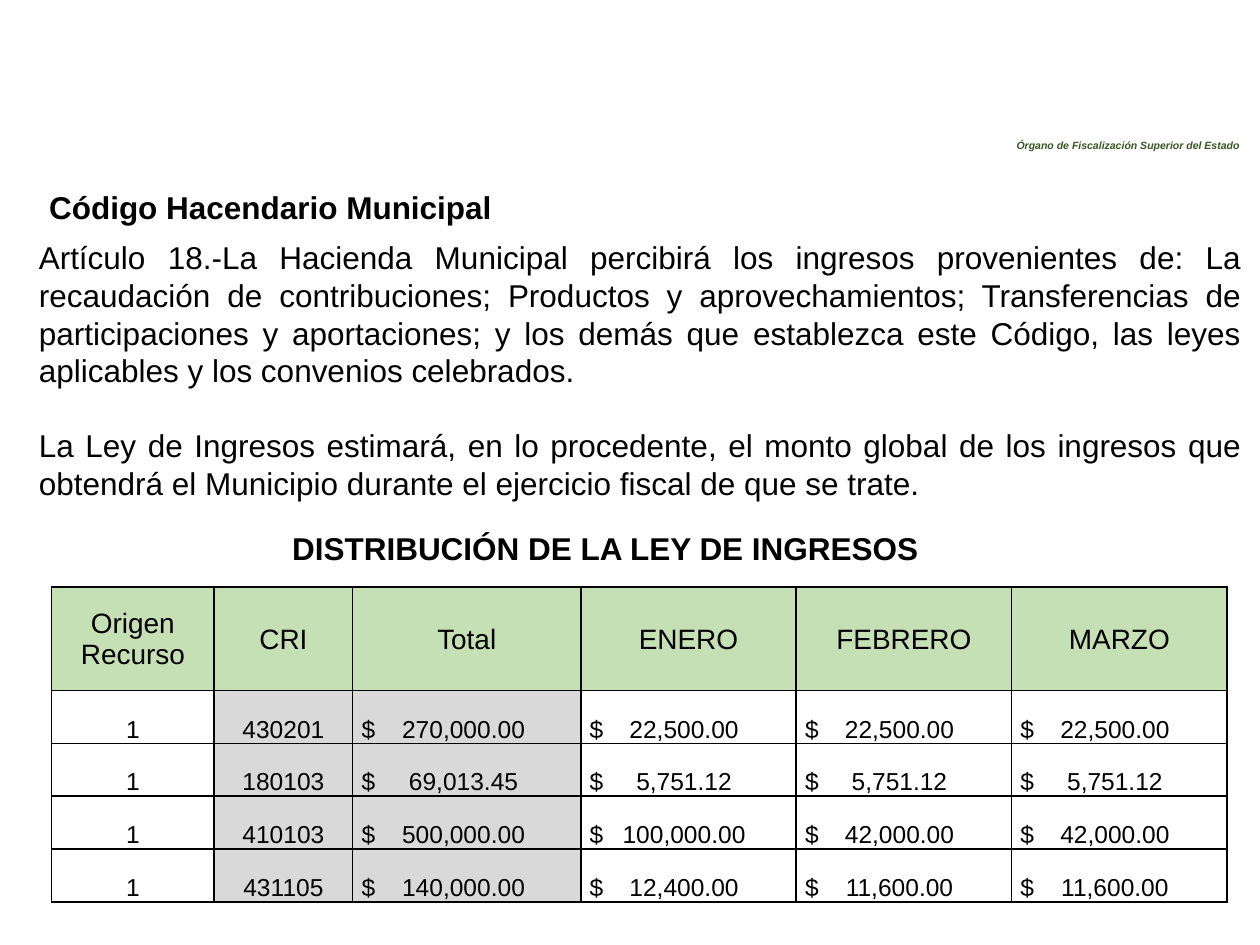
from dataclasses import dataclass
from lxml.etree import SubElement
from pptx import Presentation
from pptx.dml.color import RGBColor
from pptx.enum.shapes import MSO_SHAPE as Shape
from pptx.enum.text import MSO_ANCHOR as Anchor, MSO_AUTO_SIZE as AutoSize, PP_ALIGN as Align
from pptx.oxml.ns import qn
from pptx.util import Inches, Pt


@dataclass(frozen=True)
class Theme:
    font: str = "Arial"
    ink: str = "000000"
    paper: str = "FFFFFF"
    agency: str = "385623"
    header: str = "C5E0B4"
    shaded: str = "D9D9D9"
    agency_size: float = 6
    text_size: float = 18
    header_size: float = 16
    cell_size: float = 14
    paragraph_gap: float = 21


THEME = Theme()

# Content
AGENCY = "Órgano de Fiscalización Superior del Estado"
TITLE = "Código Hacendario Municipal"
ARTICLE = [
    "Artículo 18.-La Hacienda Municipal percibirá los ingresos provenientes de: "
    "La recaudación de contribuciones; Productos y aprovechamientos; "
    "Transferencias de participaciones y aportaciones; y los demás que establezca "
    "este Código, las leyes aplicables y los convenios celebrados.",
    "La Ley de Ingresos estimará, en lo procedente, el monto global de los ingresos "
    "que obtendrá el Municipio durante el ejercicio fiscal de que se trate.",
]
TABLE_TITLE = "DISTRIBUCIÓN DE LA LEY DE INGRESOS"
HEADERS = ["Origen\nRecurso", "CRI", "Total", "ENERO", "FEBRERO", "MARZO"]
INCOME = [
    ("1", "430201", "270,000.00", "22,500.00", "22,500.00", "22,500.00"),
    ("1", "180103", "69,013.45", "5,751.12", "5,751.12", "5,751.12"),
    ("1", "410103", "500,000.00", "100,000.00", "42,000.00", "42,000.00"),
    ("1", "431105", "140,000.00", "12,400.00", "11,600.00", "11,600.00"),
]

# Table layout, in inches
COLUMN_WIDTHS = [1.29, 1.1, 1.81] + [1.71] * 3
ROW_HEIGHTS = [0.82] + [0.42] * len(INCOME)
FIRST_AMOUNT = 2
SHADED_COLUMNS = (1, 2)
AMOUNT_CENTERS = {2: 0.81, 3: 0.75, 4: 0.75, 5: 0.75}


def style(para, size, color=THEME.ink, bold=False, italic=False, align=Align.LEFT):
    para.alignment = align
    font = para.font
    font.name, font.size, font.bold, font.italic = THEME.font, Pt(size), bold, italic
    font.color.rgb = RGBColor.from_string(color)


def write(box, texts, size, **look):
    frame = box.text_frame
    frame.word_wrap = True
    frame.auto_size = AutoSize.NONE
    frame.text = "\n".join(texts)
    for para in frame.paragraphs:
        style(para, size, **look)
    for para in frame.paragraphs[1:]:
        para.space_before = Pt(THEME.paragraph_gap)


def add_text(page, place, texts, size, **look):
    box = page.shapes.add_textbox(*map(Inches, place))
    write(box, texts, size, **look)


def add_center_tab(para, position):
    tabs = SubElement(para._p.get_or_add_pPr(), qn("a:tabLst"))
    SubElement(tabs, qn("a:tab"), pos=str(Inches(position)), algn="ctr")


def add_borders(cell):
    props = cell._tc.get_or_add_tcPr()
    for index, side in enumerate(("lnL", "lnR", "lnT", "lnB")):
        line = props.makeelement(qn(f"a:{side}"), {"w": str(Pt(1))})
        fill = SubElement(line, qn("a:solidFill"))
        SubElement(fill, qn("a:srgbClr"), val=THEME.ink)
        props.insert(index, line)


def fill_cell(cell, text, row, column):
    is_header = row == 0
    is_amount = not is_header and column >= FIRST_AMOUNT
    cell.margin_left = Inches(0.07 if is_amount else 0.01)
    cell.margin_right = cell.margin_top = Inches(0.01)
    cell.margin_bottom = 0
    cell.vertical_anchor = Anchor.MIDDLE if is_header else Anchor.BOTTOM
    cell.text = f"$\t{text}" if is_amount else text
    for para in cell.text_frame.paragraphs:
        if is_amount:
            add_center_tab(para, AMOUNT_CENTERS[column])
        style(para, THEME.header_size if is_header else THEME.cell_size,
              align=Align.LEFT if is_amount else Align.CENTER)
    if is_header or column in SHADED_COLUMNS:
        cell.fill.solid()
        color = THEME.header if is_header else THEME.shaded
        cell.fill.fore_color.rgb = RGBColor.from_string(color)
    else:
        cell.fill.background()
    add_borders(cell)


def add_income_table(page):
    rows = [HEADERS] + INCOME
    size = (sum(COLUMN_WIDTHS), sum(ROW_HEIGHTS))
    table = page.shapes.add_table(
        len(rows), len(HEADERS), *map(Inches, (0.41, 4.66, *size))).table
    table.horz_banding = False
    for column, width in zip(table.columns, COLUMN_WIDTHS):
        column.width = Inches(width)
    for row, height in zip(table.rows, ROW_HEIGHTS):
        row.height = Inches(height)
    for r, values in enumerate(rows):
        for c, text in enumerate(values):
            fill_cell(table.cell(r, c), text, r, c)


def main():
    deck = Presentation()
    deck.slide_width, deck.slide_height = Inches(10), Inches(7.5)
    page = deck.slides.add_slide(deck.slide_layouts[5])

    # Agency label
    label = page.shapes.add_shape(
        Shape.RECTANGLE, *map(Inches, (7.97, 1.05, 2.03, 0.2)))
    label.shadow.inherit = False
    label.fill.solid()
    label.fill.fore_color.rgb = RGBColor.from_string(THEME.paper)
    label.line.fill.background()
    label.text_frame.vertical_anchor = Anchor.MIDDLE
    write(label, [AGENCY], THEME.agency_size,
          color=THEME.agency, bold=True, italic=True)

    # Title
    title = page.shapes.title
    title.left, title.top, title.width, title.height = map(
        Inches, (0.29, 1.44, 4.17, 0.4))
    title.text_frame.vertical_anchor = Anchor.TOP
    write(title, [TITLE], THEME.text_size, bold=True)

    # Article, table heading and table
    add_text(page, (0.21, 1.84, 9.74, 2.22), ARTICLE, THEME.text_size,
             align=Align.JUSTIFY)
    add_text(page, (2.22, 4.15, 5.72, 0.4), [TABLE_TITLE], THEME.text_size, bold=True)
    add_income_table(page)

    deck.save("out.pptx")


if __name__ == "__main__":
    main()
